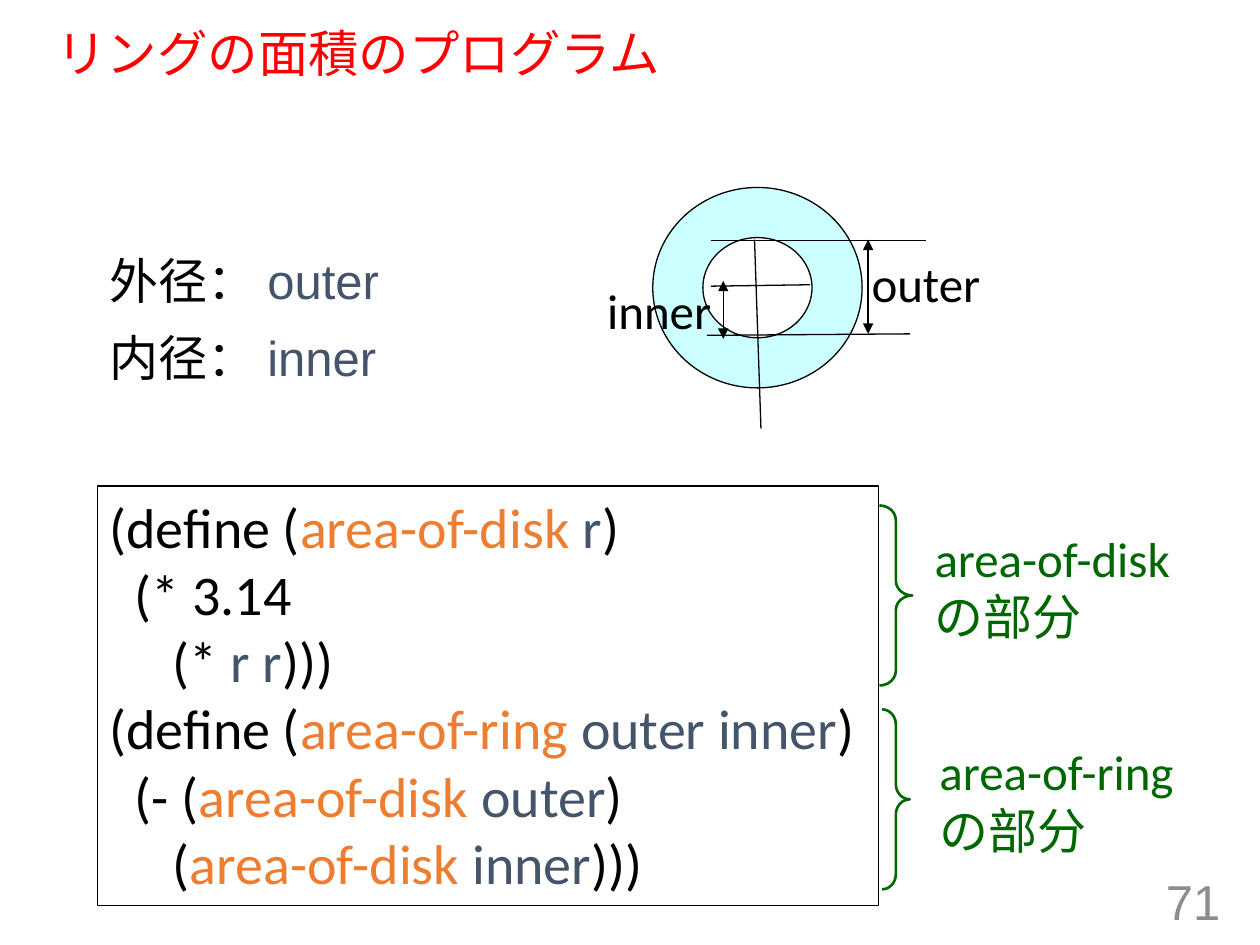
from dataclasses import dataclass

from lxml.etree import SubElement
from pptx import Presentation
from pptx.dml.color import RGBColor
from pptx.enum.shapes import MSO_CONNECTOR as CONN, MSO_SHAPE as SHAPE
from pptx.enum.text import MSO_ANCHOR as ANCHOR, MSO_AUTO_SIZE as AUTO, PP_ALIGN as ALIGN
from pptx.oxml.ns import qn
from pptx.util import Cm, Pt


@dataclass(frozen=True)
class Theme:
    black: str = "000000"
    red: str = "FF0000"
    green: str = "006600"
    orange: str = "ED7D31"
    slate: str = "44546A"
    grey: str = "8C8C8C"
    ring: str = "CCFFFF"
    sans: str = "Arial"
    body: str = "Calibri"
    title_size: float = 28.8
    text_size: float = 28
    code_size: float = 32
    thin: float = 0.75
    thick: float = 1.5


T = Theme()


def set_line(line, color, width):
    line.color.rgb = RGBColor.from_string(color)
    line.width = Pt(width)


def add_text(slide, box, paragraphs, font=T.body, size=T.text_size, wrap=False,
             frame=None, para=None, space_before=0):
    """Each paragraph is a list of (text, colour) runs."""
    sp = slide.shapes.add_textbox(*map(Cm, box))
    tf = sp.text_frame
    tf.word_wrap = wrap
    for name, value in (frame or {}).items():
        setattr(tf, name, value)
    for i, runs in enumerate(paragraphs):
        p = tf.paragraphs[0] if i == 0 else tf.add_paragraph()
        for name, value in (para or {}).items():
            setattr(p, name, value)
        if i and space_before:
            p.space_before = Pt(space_before)
        for text, color in runs:
            r = p.add_run()
            r.text = text
            r.font.name, r.font.size = font, Pt(size)
            r.font.color.rgb = RGBColor.from_string(color)
    return sp


def add_outline(slide, kind, box, adjustments, color, width, fill=None):
    sp = slide.shapes.add_shape(kind, *map(Cm, box))
    sp.shadow.inherit = False
    for i, value in enumerate(adjustments):
        sp.adjustments[i] = value
    if fill:
        sp.fill.solid()
        sp.fill.fore_color.rgb = RGBColor.from_string(fill)
    else:
        sp.fill.background()
    set_line(sp.line, color, width)


def add_line(slide, ends, arrows=False):
    cx = slide.shapes.add_connector(CONN.STRAIGHT, *map(Cm, ends))
    set_line(cx.line, T.black, T.thin)
    sp_pr = cx._element.spPr
    if arrows:
        ln = sp_pr.find(qn("a:ln"))
        for tag in ("a:headEnd", "a:tailEnd"):
            SubElement(ln, qn(tag), type="triangle")
    SubElement(sp_pr, qn("a:effectLst"))


def add_ring_diagram(slide):
    add_outline(slide, SHAPE.DONUT, (13.16, 3.78, 4.22, 4.04), [0.25],
                T.black, T.thin, T.ring)
    for ends in ((15.21, 4.83, 15.34, 8.64), (14.25, 6.76, 18.34, 6.73),
                 (14.33, 5.77, 16.33, 5.74), (14.33, 4.85, 18.67, 4.85)):
        add_line(slide, ends)
    for ends in ((17.5, 4.83, 17.5, 6.73), (14.58, 5.66, 14.58, 6.83)):
        add_line(slide, ends, arrows=True)
    for name, left, top in (("inner", 11.99, 5.66), ("outer", 17.32, 5.13)):
        add_text(slide, (left, top, 2.7, 1.32), [[(name, T.black)]],
                 frame={"auto_size": AUTO.SHAPE_TO_FIT_TEXT}, para={"line_spacing": 0.9})


def add_code(slide):
    k, fn, arg = T.black, T.orange, T.slate
    code = [
        [("(define (", k), ("area-of-disk", fn), (" r", arg), (")", k)],
        [("  (* 3.14", k)],
        [("     (* ", k), ("r r", arg), (")))", k)],
        [("(define (", k), ("area-of-ring ", fn), ("outer inner", arg), (")", k)],
        [("  (- (", k), ("area-of-disk ", fn), ("outer", arg), (")", k)],
        [("     (", k), ("area-of-disk ", fn), ("inner", arg), (")))", k)],
    ]
    sp = add_text(slide, (1.96, 9.8, 15.75, 8.46), code, size=T.code_size,
                  frame={"auto_size": AUTO.SHAPE_TO_FIT_TEXT})
    set_line(sp.line, T.black, T.thin)


def add_part(slide, name, brace, bend, label):
    """A brace beside the code and the name of the part it spans."""
    add_outline(slide, SHAPE.RIGHT_BRACE, brace, [bend, 0.5], T.green, T.thick)
    add_text(slide, label, [[(name, T.green)], [("の部分", T.green)]],
             frame={"auto_size": AUTO.SHAPE_TO_FIT_TEXT})


def main():
    prs = Presentation()
    prs.slide_width, prs.slide_height = Cm(25.4), Cm(19.05)
    slide = prs.slides.add_slide(prs.slide_layouts[6])

    middle = {"vertical_anchor": ANCHOR.MIDDLE}
    add_text(slide, (0.89, 0.48, 23.5, 1.3), [[("リングの面積のプログラム", T.red)]],
             T.sans, T.title_size, wrap=True, frame=middle, para={"line_spacing": 0.9})
    add_text(slide, (1.96, 4.93, 9.07, 4.24),
             [[("外径： ", T.black), ("outer", T.slate)],
              [("内径： ", T.black), ("inner", T.slate)]],
             T.sans, wrap=True, space_before=10)
    add_ring_diagram(slide)
    add_code(slide)
    add_part(slide, "area-of-disk", (17.73, 10.19, 0.66, 3.63), 0.45,
             (18.59, 10.52, 5.33, 2.64))
    add_part(slide, "area-of-ring", (17.78, 14.3, 0.56, 3.63), 0.54,
             (18.69, 14.83, 5.31, 2.64))
    add_text(slide, (19.13, 17.65, 5.72, 1.02), [[("71", T.grey)]], T.sans,
             wrap=True, frame=middle, para={"alignment": ALIGN.RIGHT})
    prs.save("out.pptx")


if __name__ == "__main__":
    main()
